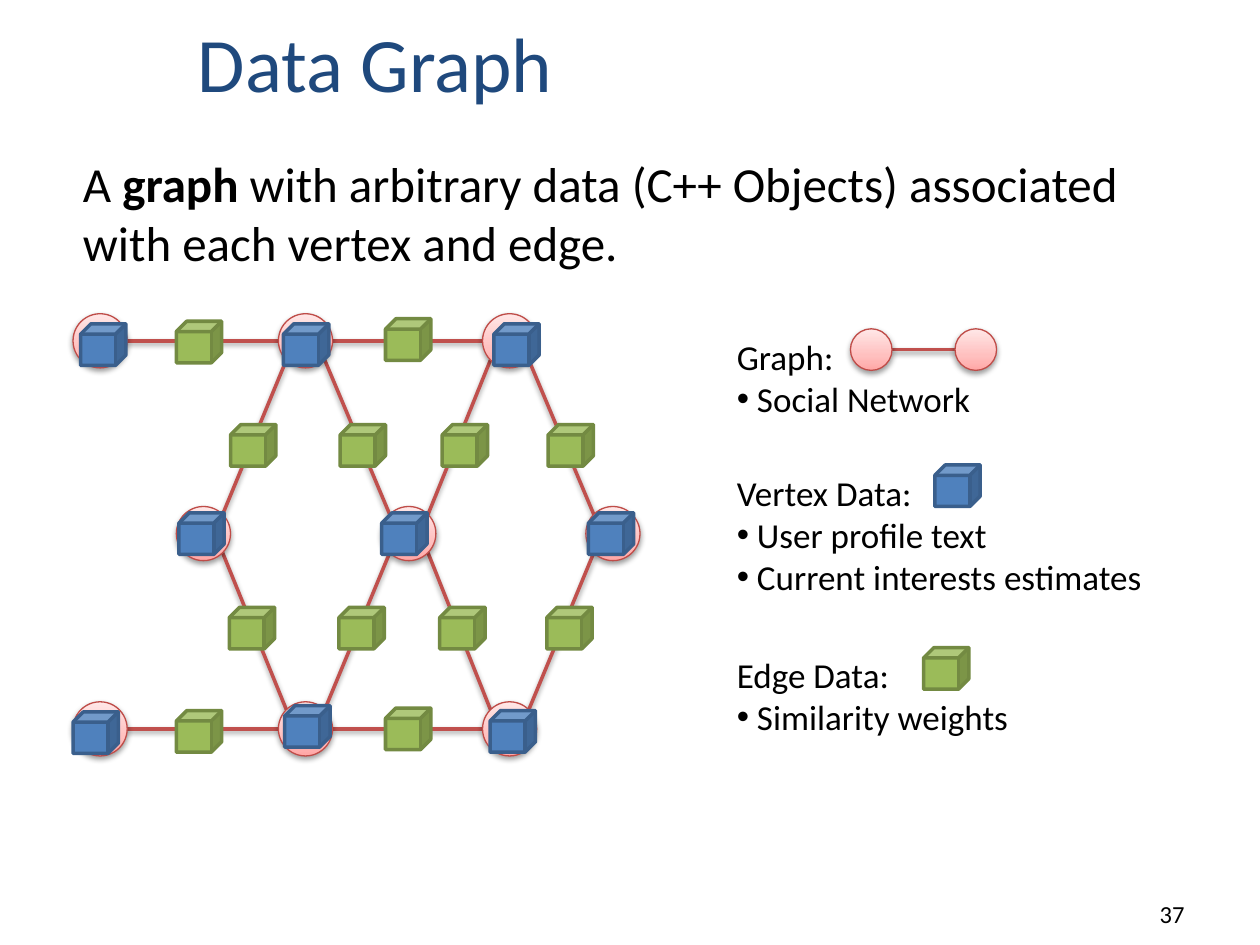
from collections import namedtuple
from copy import deepcopy
from math import sqrt

from lxml import etree
from pptx import Presentation
from pptx.dml.color import RGBColor
from pptx.enum.shapes import MSO_CONNECTOR, MSO_SHAPE
from pptx.enum.text import MSO_ANCHOR, PP_ALIGN
from pptx.oxml.ns import qn
from pptx.util import Inches, Pt

STRAIGHT = MSO_CONNECTOR.STRAIGHT
CIRCLE, CUBE = MSO_SHAPE.OVAL, MSO_SHAPE.CUBE
BOTTOM, TOP = MSO_ANCHOR.BOTTOM, MSO_ANCHOR.TOP
LEFT, RIGHT = PP_ALIGN.LEFT, PP_ALIGN.RIGHT

Box = namedtuple("Box", "left top width height")
FONT = "Calibri"
BLACK, NAVY = "000000", "1F497D"
EDGE_COLOR, RING_COLOR = "C0504D", "BF4C48"
NODE_STOPS = [(0, "FFA6A5"), (0.35, "FFC0BF"), (1, "FFE7E7")]
VERTEX_DATA, EDGE_DATA = ("4F81BD", "3A5F8C"), ("9BBB59", "738A42")
NODE_SIZE, KEY_NODE_SIZE = 0.43, 0.33
CUBE_WIDTH, CUBE_HEIGHT = 0.36, 0.33
BULLET_INDENT = 0.16

# Node position and the position of its data cube, within the graph's box
NODES = {
    "A": ((0, 0), (0.06, 0.08)),
    "B": ((1.63, 0), (1.67, 0.08)),
    "C": ((3.25, 0), (3.34, 0.08)),
    "D": ((0.82, 1.53), (0.84, 1.58)),
    "E": ((2.45, 1.53), (2.45, 1.58)),
    "F": ((4.07, 1.53), (4.09, 1.58)),
    "G": ((0, 3.08), (0, 3.16)),
    "H": ((1.63, 3.08), (1.68, 3.11)),
    "I": ((3.25, 3.08), (3.31, 3.15)),
}
# Edge and the position of its data cube
EDGES = {
    "AB": (0.82, 0.06), "BC": (2.48, 0.04),
    "BD": (1.25, 0.88), "BE": (2.12, 0.88),
    "CE": (2.93, 0.88), "CF": (3.77, 0.88),
    "DH": (1.24, 2.33), "EH": (2.11, 2.33),
    "EI": (2.91, 2.33), "FI": (3.76, 2.33),
    "GH": (0.82, 3.15), "HI": (2.48, 3.13),
}


def rgb(color):
    return RGBColor.from_string(color)


def inches(*lengths):
    return [Inches(length) for length in lengths]


def set_line(shape, color, width):
    shape.line.color.rgb = rgb(color)
    shape.line.width = Pt(width)


def add_soft_shadow(shape):
    effects = etree.SubElement(shape._element.spPr, qn("a:effectLst"))
    shadow = etree.SubElement(effects, qn("a:outerShdw"), blurRad="40000",
                              dist="20000", dir="5400000", rotWithShape="0")
    color = etree.SubElement(shadow, qn("a:srgbClr"), val=BLACK)
    etree.SubElement(color, qn("a:alpha"), val="38000")


def add_edge(page, start, end):
    edge = page.shapes.add_connector(STRAIGHT, *inches(*start, *end))
    set_line(edge, EDGE_COLOR, 2)
    add_soft_shadow(edge)


def add_node(page, left, top, size):
    node = page.shapes.add_shape(CIRCLE, *inches(left, top, size, size))
    node.fill.gradient()
    node.fill.gradient_angle = 90
    stop_list = node._element.spPr.find(qn("a:gradFill")).find(qn("a:gsLst"))
    stop_list.append(deepcopy(stop_list[-1]))
    for stop, (position, color) in zip(node.fill.gradient_stops, NODE_STOPS):
        stop.position = position
        stop.color.rgb = rgb(color)
    set_line(node, RING_COLOR, 0.75)
    add_soft_shadow(node)


def add_cube(page, left, top, colors):
    cube = page.shapes.add_shape(CUBE, *inches(left, top, CUBE_WIDTH, CUBE_HEIGHT))
    cube.fill.solid()
    cube.fill.fore_color.rgb = rgb(colors[0])
    set_line(cube, colors[1], 2)
    cube.shadow.inherit = False


def add_span(para, text, size, color=BLACK, bold=False):
    span = para.add_run()
    span.text = text
    values = {"name": FONT, "size": Pt(size), "bold": bold}
    for name, value in values.items():
        setattr(span.font, name, value)
    span.font.color.rgb = rgb(color)


def add_text_frame(page, box, anchor=TOP):
    frame = page.shapes.add_textbox(*inches(*box)).text_frame
    frame.word_wrap = True
    frame.vertical_anchor = anchor
    return frame


def add_bullet(para):
    properties = para._p.get_or_add_pPr()
    indent = Inches(BULLET_INDENT)
    properties.set("marL", str(indent))
    properties.set("indent", str(-indent))
    etree.SubElement(properties, qn("a:buFont"), typeface="Arial")
    etree.SubElement(properties, qn("a:buChar"), char="•")


def place_title(page, box):
    title = page.shapes.title
    for name, length in box._asdict().items():
        setattr(title, name, Inches(length))
    title.text_frame.vertical_anchor = BOTTOM
    para = title.text_frame.paragraphs[0]
    para.alignment = LEFT
    add_span(para, "Data Graph", 44, NAVY)


def place_definition(page, box):
    para = add_text_frame(page, box).paragraphs[0]
    add_span(para, "A ", 28)
    add_span(para, "graph ", 28, bold=True)
    add_span(para, "with arbitrary data (C++ Objects) associated "
                   "with each vertex and edge.", 28)


def rim_points(start, end, radius):
    """Ends of an edge on the rims: at the side, or at 45 degrees for a slanted edge."""
    signs = [(b > a) - (b < a) for a, b in zip(start, end)]
    reach = radius / sqrt(2) if all(signs) else radius
    return ([a + sign * reach for a, sign in zip(start, signs)],
            [b - sign * reach for b, sign in zip(end, signs)])


def place_graph(page, box):
    radius = NODE_SIZE / 2
    centers = {name: (box.left + x + radius, box.top + y + radius)
               for name, ((x, y), _) in NODES.items()}
    for first, second in EDGES:
        add_edge(page, *rim_points(centers[first], centers[second], radius))
    for (x, y), _ in NODES.values():
        add_node(page, box.left + x, box.top + y, NODE_SIZE)
    # Data cubes on vertices, then on edges
    for _, (x, y) in NODES.values():
        add_cube(page, box.left + x, box.top + y, VERTEX_DATA)
    for x, y in EDGES.values():
        add_cube(page, box.left + x, box.top + y, EDGE_DATA)


def place_legend_entry(page, box, heading, items):
    frame = add_text_frame(page, box)
    add_span(frame.paragraphs[0], heading, 20)
    for item in items:
        para = frame.add_paragraph()
        add_bullet(para)
        add_span(para, item, 20)


def place_legend(page, box):
    graph_top, vertex_top, edge_top = box.top, box.top + 1.08, box.top + 2.53
    place_legend_entry(page, Box(box.left, graph_top, box.width, 0.77),
                       "Graph:", ["Social Network"])
    place_legend_entry(page, Box(box.left, vertex_top, box.width, 1.11),
                       "Vertex Data:", ["User profile text", "Current interests estimates"])
    place_legend_entry(page, Box(box.left, edge_top, box.width, 0.77),
                       "Edge Data:", ["Similarity weights"])
    # Key symbols beside the headings
    first, second = box.left + 1, box.left + 1.83
    middle = graph_top + KEY_NODE_SIZE / 2
    add_edge(page, (first + KEY_NODE_SIZE, middle), (second, middle))
    for left in (first, second):
        add_node(page, left, graph_top, KEY_NODE_SIZE)
    add_cube(page, box.left + 1.67, vertex_top, VERTEX_DATA)
    add_cube(page, box.left + 1.58, edge_top, EDGE_DATA)


def place_page_number(page, box):
    para = add_text_frame(page, box, BOTTOM).paragraphs[0]
    para.alignment = RIGHT
    add_span(para, "37", 14)


def main():
    deck = Presentation()
    deck.slide_width, deck.slide_height = inches(10, 7.5)
    page = deck.slides.add_slide(deck.slide_layouts.get_by_name("Title Only"))
    place_title(page, Box(1.47, 0.08, 8.2, 0.83))
    place_definition(page, Box(0.56, 1.17, 8.69, 1.04))
    place_graph(page, Box(0.58, 2.49, 4.5, 3.51))
    place_legend(page, Box(5.75, 2.61, 4, 3.3))
    place_page_number(page, Box(7.42, 6.92, 2.08, 0.5))
    deck.save("out.pptx")


if __name__ == "__main__":
    main()
